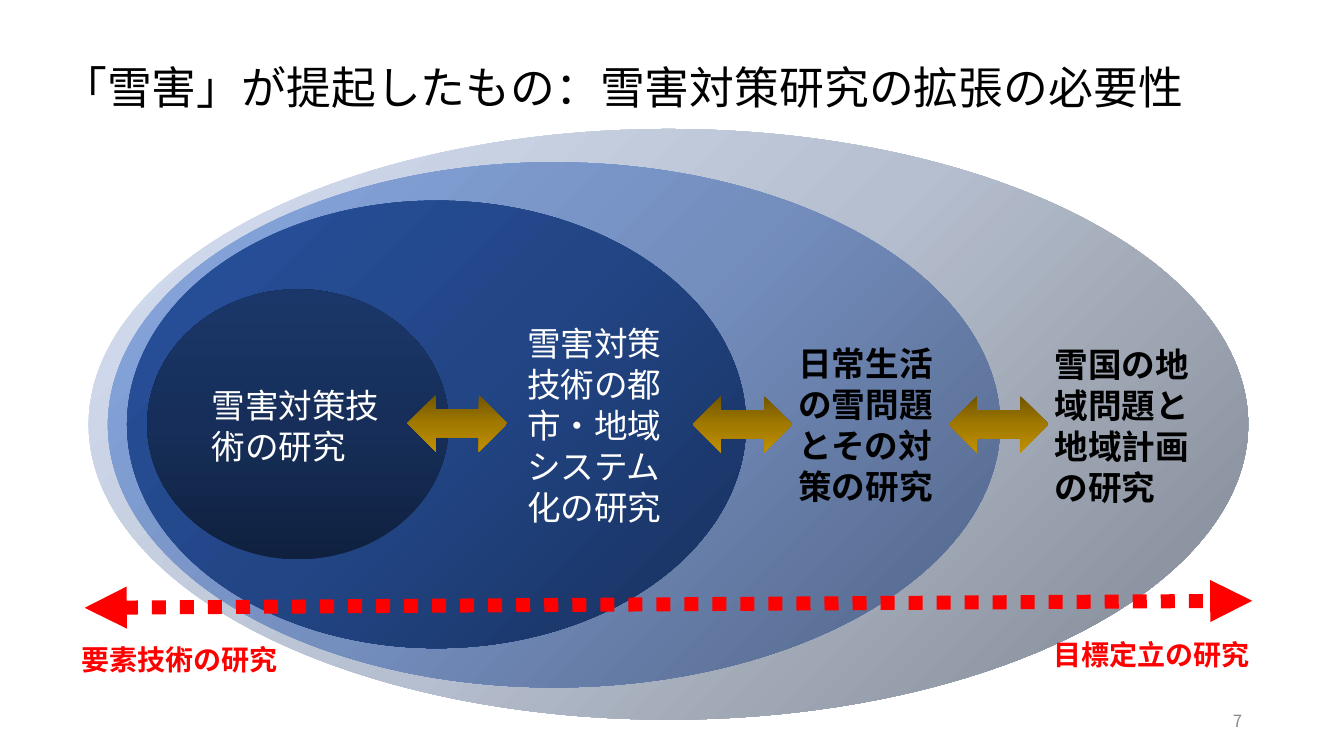
from lxml import etree
from pptx import Presentation
from pptx.dml.color import RGBColor
from pptx.enum.shapes import MSO_CONNECTOR, MSO_SHAPE
from pptx.enum.text import MSO_ANCHOR, MSO_AUTO_SIZE, PP_ALIGN
from pptx.oxml.ns import qn
from pptx.util import Inches, Pt

OVAL = MSO_SHAPE.OVAL
TWO_WAY = MSO_SHAPE.LEFT_RIGHT_ARROW
STRAIGHT = MSO_CONNECTOR.STRAIGHT
LEFT, CENTER, RIGHT = PP_ALIGN.LEFT, PP_ALIGN.CENTER, PP_ALIGN.RIGHT
TOP, MIDDLE = MSO_ANCHOR.TOP, MSO_ANCHOR.MIDDLE
FIXED = MSO_AUTO_SIZE.NONE


def color(code):
    return RGBColor.from_string(code)


def inches(values):
    return [Inches(value) for value in values]


def assign(target, values):
    for name, value in values.items():
        setattr(target, name, value)


class SnowSlide:
    font = "Noto Sans CJK JP"
    line_ratio = 1.22

    def __init__(self, deck):
        self.slide = deck.slides.add_slide(deck.slide_layouts[5])
        self.shapes = self.slide.shapes

    def set_text(self, holder, wording, size, ink, bold=False, align=LEFT, anchor=TOP):
        frame = holder.text_frame
        assign(frame, {"word_wrap": True, "auto_size": FIXED, "vertical_anchor": anchor})
        paragraph = frame.paragraphs[0]
        assign(paragraph, {"alignment": align, "line_spacing": Pt(size * self.line_ratio)})
        run = paragraph.add_run()
        run.text = wording
        assign(run.font, {"name": self.font, "size": Pt(size), "bold": bold})
        run.font.color.rgb = color(ink)
        east_asian = etree.SubElement(run.font._element, qn("a:ea"))
        east_asian.set("typeface", self.font)

    def title(self, box, wording):
        heading = self.shapes.title
        assign(heading, dict(zip(("left", "top", "width", "height"), inches(box))))
        self.set_text(heading, wording, 32, "000000", align=CENTER, anchor=MIDDLE)

    def label(self, box, wording, size, ink, **style):
        self.set_text(self.shapes.add_textbox(*inches(box)), wording, size, ink, **style)

    def gradient_shape(self, kind, box, stops, angle=None):
        shape = self.shapes.add_shape(kind, *inches(box))
        shape.shadow.inherit = False
        shape.line.fill.background()
        gradient = etree.Element(qn("a:gradFill"), rotWithShape="1")
        stop_list = etree.SubElement(gradient, qn("a:gsLst"))
        for position, code in zip((0, 50, 100), stops):
            stop = etree.SubElement(stop_list, qn("a:gs"), pos=str(position * 1000))
            etree.SubElement(stop, qn("a:srgbClr"), val=code)
        if angle is None:
            radial = etree.SubElement(gradient, qn("a:path"), {"path": "circle"})
            etree.SubElement(radial, qn("a:fillToRect"), l="100000", t="100000")
        else:
            etree.SubElement(gradient, qn("a:lin"), ang=str(angle * 60000), scaled="0")
        shape._element.spPr.find(qn("a:prstGeom")).addnext(gradient)

    def dotted_arrow(self, start, end, ink, width):
        axis = self.shapes.add_connector(STRAIGHT, *inches(start + end))
        axis.line.color.rgb = color(ink)
        axis.line.width = Pt(width)
        outline = axis._element.spPr.find(qn("a:ln"))
        etree.SubElement(outline, qn("a:prstDash"), val="sysDot")
        for tip in ("a:headEnd", "a:tailEnd"):
            etree.SubElement(outline, qn(tip), type="triangle")
        etree.SubElement(axis._element.spPr, qn("a:effectLst"))


def main():
    deck = Presentation()
    assign(deck, {"slide_width": Inches(13.33), "slide_height": Inches(7.5)})
    page = SnowSlide(deck)
    page.title((0.43, 0.53, 11.5, 0.64), "「雪害」が提起したもの：雪害対策研究の拡張の必要性")

    research_fields = [
        ((0.88, 1.28, 11.5, 5.86), ("808691", "B6BFCF", "D8E2F5"), None),
        ((1.07, 1.61, 8.85, 5.21), ("516486", "748EBE", "89A9E1"), None),
        ((1.26, 1.99, 6.14, 4.44), ("18315E", "224585", "28529E"), None),
        ((1.46, 2.87, 2.99, 2.68), ("10213F", "162E59", "1B3769"), 270),
    ]
    for box, stops, angle in research_fields:
        page.gradient_shape(OVAL, box, stops, angle)

    field_names = [
        ((2, 3.76, 1.92, 0.91), "雪害対策技術の研究", "FFFFFF", False),
        ((5.13, 3.15, 1.59, 2.12), "雪害対策技術の都市・地域システム化の研究", "FFFFFF", False),
        ((7.82, 3.35, 1.59, 1.72), "日常生活の雪問題とその対策の研究", "000000", True),
        ((10.36, 3.36, 1.56, 1.72), "雪国の地域問題と地域計画の研究", "000000", True),
    ]
    for box, wording, ink, bold in field_names:
        page.label(box, wording, 24, ink, bold=bold)

    for left, top in ((4.04, 3.92), (6.87, 3.93), (9.41, 3.93)):
        page.gradient_shape(TWO_WAY, (left, top, 0.99, 0.56), ("715500", "A17900", "BF9000"), 90)

    page.label((9.42, 6.95, 3, 0.4), "7", 12, "8C8C8C", align=RIGHT, anchor=MIDDLE)
    page.dotted_arrow((0.84, 6.03), (12.42, 5.96), "FF0000", 10)
    for left, top, wording in ((0.71, 6.32, "要素技術の研究"), (10.35, 6.27, "目標定立の研究")):
        page.label((left, top, 2.2, 0.44), wording, 20, "FF0000", bold=True)

    deck.save("out.pptx")


if __name__ == "__main__":
    main()
